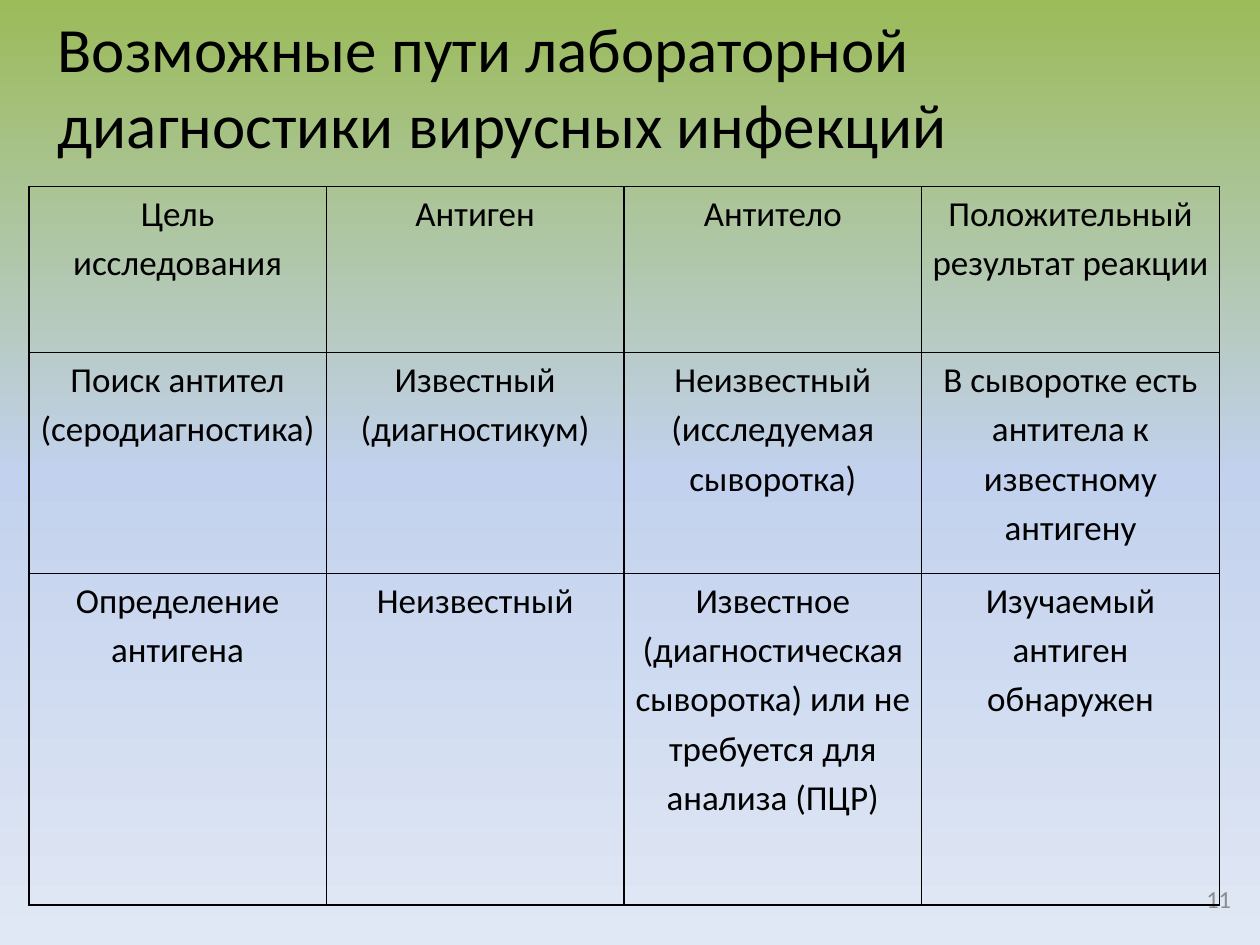
"""Build a slide with a table of laboratory diagnostics of viral infections."""
import copy
import dataclasses

import pptx
import pptx.dml.color
import pptx.enum.text
import pptx.oxml
import pptx.oxml.ns
import pptx.util

Cm = pptx.util.Cm
Pt = pptx.util.Pt
ALIGN = pptx.enum.text.PP_ALIGN
MIDDLE = pptx.enum.text.MSO_ANCHOR.MIDDLE


@dataclasses.dataclass(frozen=True)
class Theme:
    font: str = "Calibri"
    text: str = "000000"
    muted: str = "8C8C8C"
    border: str = "000000"
    background: tuple = ((0, "9BBB59"), (0.5, "C2D1ED"), (1, "E1E8F5"))
    title_size: int = 36
    table_size: int = 20
    number_size: int = 14
    line_spacing: float = 1.15


THEME = Theme()

ROWS = (
    ("Цель исследования", "Антиген", "Антитело", "Положительный результат реакции"),
    ("Поиск антител (серодиагностика)", "Известный (диагностикум)",
     "Неизвестный (исследуемая сыворотка)",
     "В сыворотке есть антитела к известному антигену"),
    ("Определение антигена", "Неизвестный",
     "Известное (диагностическая сыворотка) или не требуется для анализа (ПЦР)",
     "Изучаемый антиген обнаружен"),
)
COL_WIDTH = 6
ROW_HEIGHTS = (3.35, 4.45, 6.68)


def rgb(value):
    return pptx.dml.color.RGBColor.from_string(value)


def set_text(tf, text, size, color, align):
    tf.text = text
    tf.word_wrap = True
    p = tf.paragraphs[0]
    p.alignment = align
    for r in p.runs:
        r.font.name = THEME.font
        r.font.size = Pt(size)
        r.font.bold = False
        r.font.color.rgb = rgb(color)
    return p


def set_background(s):
    fill = s.background.fill
    fill.gradient()
    fill.gradient_angle = 270
    stops = s.element.find(".//" + pptx.oxml.ns.qn("a:gsLst"))
    stops.append(copy.deepcopy(stops[0]))
    for stop, (position, color) in zip(fill.gradient_stops, THEME.background):
        stop.position = position
        stop.color.rgb = rgb(color)


def add_title(s, text):
    sp = s.shapes.title
    sp.left, sp.top, sp.width, sp.height = Cm(0.91), Cm(0.51), Cm(23.16), Cm(2.41)
    tf = sp.text_frame
    set_text(tf, text, THEME.title_size, THEME.text, ALIGN.LEFT)
    tf.auto_size = pptx.enum.text.MSO_AUTO_SIZE.NONE
    tf.vertical_anchor = MIDDLE


def add_number(s, text):
    sp = s.shapes.add_textbox(Cm(23.77), Cm(17.86), Cm(1.3), Cm(0.53))
    set_text(sp.text_frame, text, THEME.number_size, THEME.muted, ALIGN.RIGHT)
    sp.text_frame.vertical_anchor = MIDDLE


def set_borders(cell):
    props = cell._tc.get_or_add_tcPr()
    for side in ("lnL", "lnR", "lnT", "lnB"):
        props.append(pptx.oxml.parse_xml(
            f'<a:{side} {pptx.oxml.ns.nsdecls("a")} w="{Pt(1)}"><a:solidFill>'
            f'<a:srgbClr val="{THEME.border}"/></a:solidFill></a:{side}>'))


def format_cell(cell, text):
    p = set_text(cell.text_frame, text, THEME.table_size, THEME.text, ALIGN.CENTER)
    p.line_spacing = THEME.line_spacing
    cell.margin_left = cell.margin_right = Cm(0.18)
    cell.margin_top = cell.margin_bottom = 0
    set_borders(cell)
    cell.fill.background()


def add_table(s, rows):
    n_cols = len(rows[0])
    table = s.shapes.add_table(len(rows), n_cols, Cm(0.58), Cm(3.76),
                               Cm(COL_WIDTH * n_cols), Cm(sum(ROW_HEIGHTS))).table
    table.horz_banding = False
    for col in table.columns:
        col.width = Cm(COL_WIDTH)
    for i, (texts, height) in enumerate(zip(rows, ROW_HEIGHTS)):
        table.rows[i].height = Cm(height)
        for j, text in enumerate(texts):
            format_cell(table.cell(i, j), text)


def main():
    prs = pptx.Presentation()
    prs.slide_width, prs.slide_height = Cm(25.4), Cm(19.05)
    s = prs.slides.add_slide(prs.slide_layouts[5])
    set_background(s)
    add_title(s, "Возможные пути лабораторной диагностики вирусных инфекций")
    add_number(s, "11")
    add_table(s, ROWS)
    prs.save("out.pptx")


if __name__ == "__main__":
    main()
